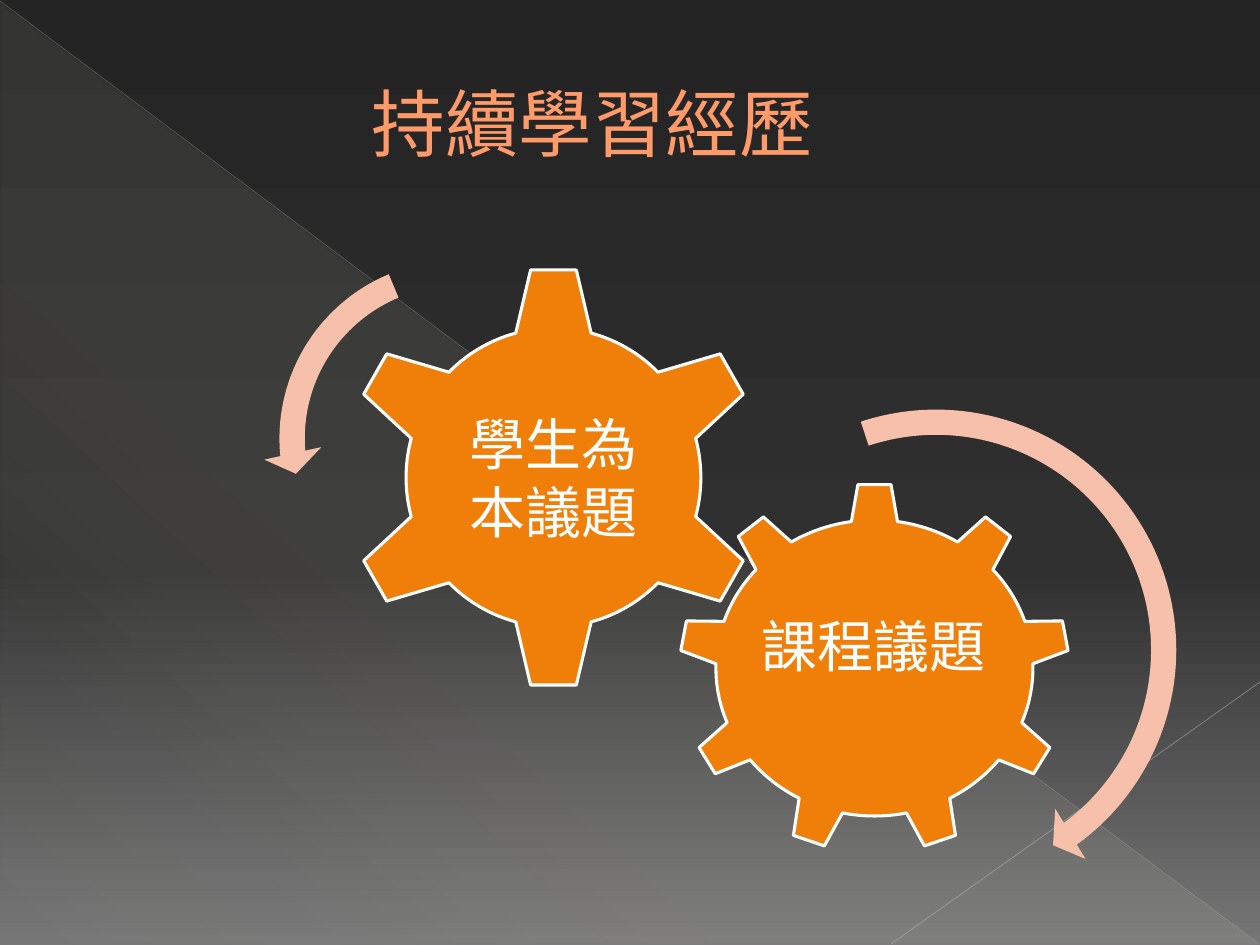
from collections import namedtuple
from dataclasses import dataclass

from lxml import etree
from pptx import Presentation
from pptx.dml.color import RGBColor
from pptx.enum.shapes import MSO_CONNECTOR, MSO_SHAPE
from pptx.enum.text import MSO_ANCHOR, PP_ALIGN
from pptx.oxml.ns import qn
from pptx.util import Emu, Pt

LINE = MSO_CONNECTOR.STRAIGHT
TRIANGLE = MSO_SHAPE.RIGHT_TRIANGLE
GEAR_6, GEAR_9 = MSO_SHAPE.GEAR_6, MSO_SHAPE.GEAR_9
ARROW_RIGHT, ARROW_LEFT = MSO_SHAPE.CIRCULAR_ARROW, MSO_SHAPE.LEFT_CIRCULAR_ARROW
MIDDLE = MSO_ANCHOR.MIDDLE
LEFT, CENTER = PP_ALIGN.LEFT, PP_ALIGN.CENTER
TITLE_ONLY = 5
PIXELS_PER_INCH = 126

Box = namedtuple("Box", "left top width height")
Sweep = namedtuple("Sweep", "thickness head_angle end start head_width")


@dataclass(frozen=True)
class Theme:
    font: str = "Lato"
    title: str = "FF9B6A"
    title_outline: str = "A65806"
    gear: str = "F07F09"
    white: str = "FFFFFF"
    arrow: str = "F6C0AB"
    diagonal: str = "B6B6B6"
    corner: str = "BFBFBF"
    background: tuple = ((0, "242424", 100), (60, "303030", 100), (100, "767676", 100))
    veil: tuple = ((0, "E3DED1", 10), (70, "E3DED1", 8), (100, "E3DED1", 1))
    title_size: int = 42
    label_size: int = 32


THEME = Theme()


def px(value):
    return Emu(round(value * 914400 / PIXELS_PER_INCH))


def place(box, left, top, width, height):
    return [px(value) for value in (box.left + left, box.top + top, width, height)]


def set_alpha(color, percent):
    etree.SubElement(color, qn("a:alpha"), val=str(percent * 1000))


def set_gradient(fill, owner, stops, angle):
    fill.gradient()
    gradient = next(owner.iter(qn("a:gradFill")))
    stop_list = gradient.find(qn("a:gsLst"))
    for stop in list(stop_list):
        stop_list.remove(stop)
    for position, color, opacity in stops:
        stop = etree.SubElement(stop_list, qn("a:gs"), pos=str(position * 1000))
        set_alpha(etree.SubElement(stop, qn("a:srgbClr"), val=color), opacity)
    gradient.find(qn("a:lin")).set("ang", str(angle * 60000))


def set_font(paragraph, size, color):
    font = paragraph.font
    font.name = THEME.font
    font.size = Pt(size)
    font.color.rgb = RGBColor.from_string(color)


def add_shape(shapes, kind, position, color=None):
    shape = shapes.add_shape(kind, *position)
    shape.shadow.inherit = False
    shape.line.fill.background()
    if color:
        shape.fill.solid()
        shape.fill.fore_color.rgb = RGBColor.from_string(color)
    return shape


def add_line(slide, start, end, color, width, opacity):
    points = [px(value) for value in (*start, *end)]
    connector = slide.shapes.add_connector(LINE, *points)
    connector.line.color.rgb = RGBColor.from_string(color)
    connector.line.width = Pt(width)
    properties = connector.element.spPr
    set_alpha(next(properties.iter(qn("a:srgbClr"))), opacity)
    etree.SubElement(properties, qn("a:effectLst"))


def build_backdrop(slide, box):
    set_gradient(slide.background.fill, slide.element, THEME.background, 90)
    triangle = add_shape(slide.shapes, TRIANGLE, place(box, 1, 3, box.width - 2, box.height - 3))
    set_gradient(triangle.fill, triangle.element, THEME.veil, 133)
    right, bottom = box.left + box.width, box.top + box.height
    add_line(slide, (box.left, box.top + 1), (right - 1, bottom - 1), THEME.diagonal, 0.39, 35)
    add_line(slide, (right, bottom - 263), (right - 369, bottom - 1), THEME.corner, 0.47, 45)


def build_title(slide, box, text):
    title = slide.shapes.title
    title.left, title.top, title.width, title.height = place(box, 0, 0, box.width, box.height)
    slide.shapes.element.append(title.element)
    frame = title.text_frame
    frame.text = text
    frame.vertical_anchor = MIDDLE
    paragraph = frame.paragraphs[0]
    paragraph.alignment = LEFT
    set_font(paragraph, THEME.title_size, THEME.title)
    properties = paragraph._p.get_or_add_pPr()
    properties.set("marL", str(px(67)))
    properties.set("indent", "0")
    outline = etree.Element(qn("a:ln"), w=str(Pt(0.5)))
    fill = etree.SubElement(outline, qn("a:solidFill"))
    etree.SubElement(fill, qn("a:srgbClr"), val=THEME.title_outline)
    properties.find(qn("a:defRPr")).insert(0, outline)


def build_gear(shapes, kind, box, label_box, text, bottom_inset=5):
    gear = add_shape(shapes, kind, place(box, 0, 0, box.width, box.height), THEME.gear)
    gear.line.color.rgb = RGBColor.from_string(THEME.white)
    gear.line.width = Pt(1.75)
    label = shapes.add_textbox(*place(box, *label_box))
    frame = label.text_frame
    frame.word_wrap = True
    frame.vertical_anchor = MIDDLE
    frame.margin_left = frame.margin_right = frame.margin_top = px(5)
    frame.margin_bottom = px(bottom_inset)
    frame.text = text
    paragraph = frame.paragraphs[0]
    paragraph.alignment = CENTER
    set_font(paragraph, THEME.label_size, THEME.white)


def build_arrow(shapes, kind, box, sweep):
    arrow = add_shape(shapes, kind, place(box, 0, 0, box.width, box.height), THEME.arrow)
    values = (
        sweep.thickness / 100,
        sweep.head_angle * 0.6,
        sweep.end * 0.6,
        sweep.start * 0.6,
        sweep.head_width / 100,
    )
    for index, value in enumerate(values):
        arrow.adjustments[index] = value


def build_gear_diagram(slide, box):
    shapes = slide.shapes.add_group_shape().shapes

    def inner(left, top, width, height):
        return Box(box.left + left, box.top + top, width, height)

    build_gear(shapes, GEAR_9, inner(416, 239, 391, 370), Box(77, 87, 236, 190), "課程議題", 44)
    build_gear(shapes, GEAR_6, inner(80, 21, 421, 425), Box(106, 107, 209, 210), "學生為本議題")
    build_arrow(shapes, ARROW_RIGHT, inner(416, 149, 514, 514), Sweep(4.9, 5.21, 53.84, 251.77, 5.7))
    build_arrow(shapes, ARROW_LEFT, inner(0, 0, 389, 389), Sweep(6.5, 7.17, 174.82, 247.3, 7.5))


def main():
    presentation = Presentation()
    page = Box(0, 0, 1260, 945)
    presentation.slide_width, presentation.slide_height = px(page.width), px(page.height)
    slide = presentation.slides.add_slide(presentation.slide_layouts[TITLE_ONLY])
    build_backdrop(slide, page)
    build_title(slide, Box(292, 26, 1134, 193), "持續學習經歷")
    build_gear_diagram(slide, Box(263, 244, 930, 663))
    presentation.save("out.pptx")


if __name__ == "__main__":
    main()
